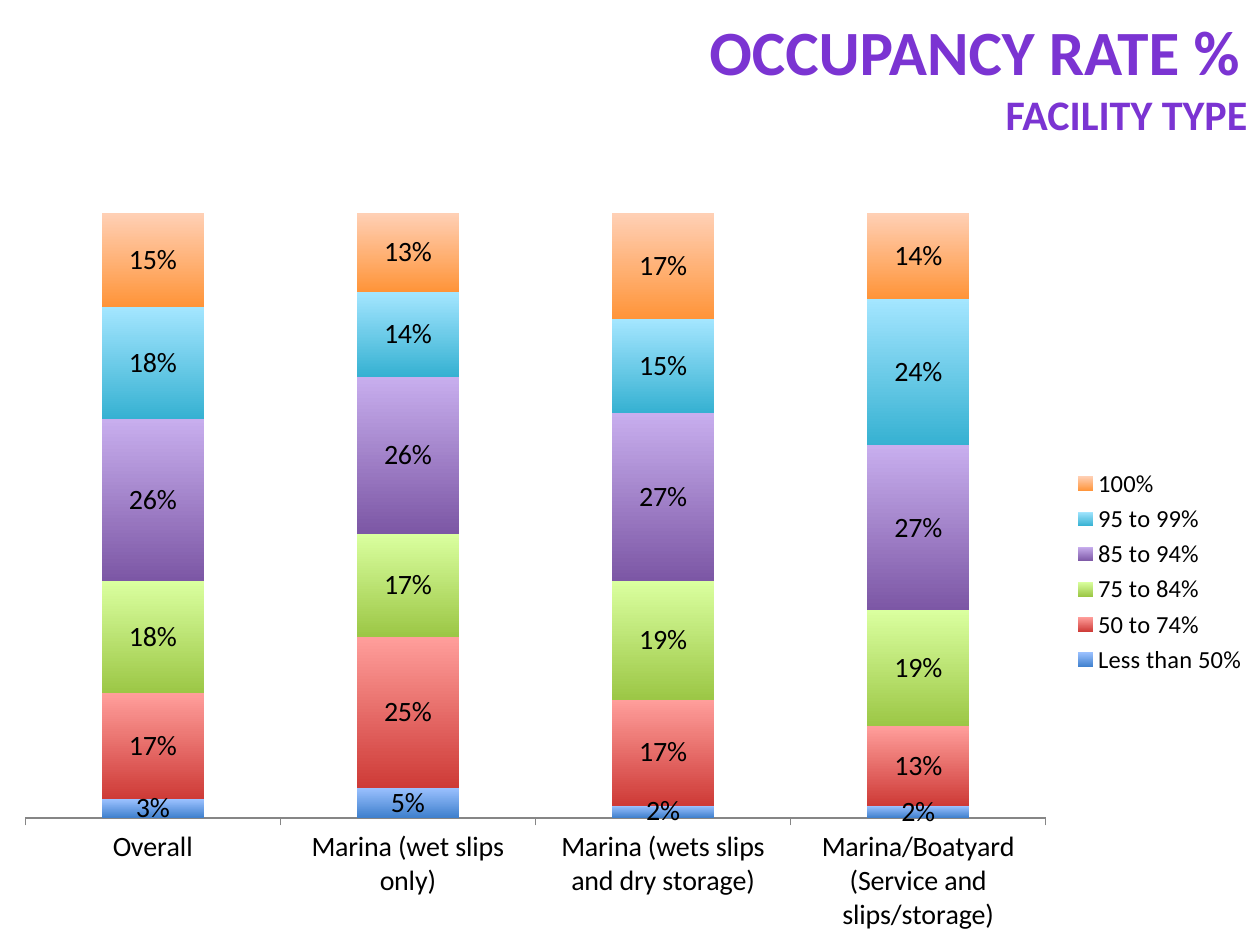
from dataclasses import dataclass

from lxml import etree
from pptx import Presentation, util as u
from pptx.chart.data import CategoryChartData
from pptx.dml.color import RGBColor
from pptx.enum import chart as ch, text as tx


@dataclass(frozen=True)
class Theme:
    font: str = "Calibri"
    title: str = "7B34D2"
    ink: str = "000000"
    axis: str = "868686"
    head: int = 36
    sub: int = 24
    label: int = 16
    key: int = 14


BANDS = [
    ("Less than 50%", (0.03, 0.05, 0.02, 0.02), "3F80CD", "9BC1FF"),
    ("50 to 74%", (0.17, 0.25, 0.17, 0.13), "CE3B37", "FF9E9B"),
    ("75 to 84%", (0.18, 0.17, 0.19, 0.19), "9CC746", "DAFF9F"),
    ("85 to 94%", (0.26, 0.26, 0.27, 0.27), "7C57A5", "C8AEEE"),
    ("95 to 99%", (0.18, 0.14, 0.15, 0.24), "36B1D2", "A4E6FF"),
    ("100%", (0.15, 0.13, 0.17, 0.14), "FF9439", "FFD0B5"),
]
TYPES = [
    "Overall",
    "Marina (wet slips only)",
    "Marina (wets slips and dry storage)",
    "Marina/Boatyard (Service and slips/storage)",
]


class Deck:
    def __init__(self, theme):
        self.theme = theme
        self.prs = Presentation()
        self.prs.slide_width, self.prs.slide_height = u.Inches(10), u.Inches(7.5)
        self.slide = self.prs.slides.add_slide(self.prs.slide_layouts[5])

    def place(self, x, y, w, h):
        wide, high = self.prs.slide_width, self.prs.slide_height
        return int(x * wide), int(y * high), int(w * wide), int(h * high)

    def style(self, font, size, color, bold=False):
        font.name, font.size, font.bold = self.theme.font, u.Pt(size), bold
        font.color.rgb = RGBColor.from_string(color)

    def title(self, box, lines):
        shape = self.slide.shapes.title
        shape.left, shape.top, shape.width, shape.height = self.place(*box)
        frame = shape.text_frame
        frame.word_wrap = False
        frame.auto_size = tx.MSO_AUTO_SIZE.SHAPE_TO_FIT_TEXT
        frame.vertical_anchor = tx.MSO_ANCHOR.TOP
        for i, (words, size, align) in enumerate(lines):
            para = frame.add_paragraph() if i else frame.paragraphs[0]
            para.alignment = align
            run = para.add_run()
            run.text = words
            self.style(run.font, size, self.theme.title, True)

    def stack(self, box, plot_box, cats, bands):
        data = CategoryChartData(number_format="0%")
        data.categories = cats
        for name, vals, *_ in bands:
            data.add_series(name, vals)
        kind = ch.XL_CHART_TYPE.COLUMN_STACKED_100
        chart = self.slide.shapes.add_chart(kind, *self.place(*box), data).chart
        chart.has_title = False
        self.style(chart.font, self.theme.label, self.theme.ink)
        self.axes(chart)
        self.legend(chart)
        plot = chart.plots[0]
        plot.gap_width, plot.overlap, plot.vary_by_categories = 150, 100, False
        for series, (_, _, low, high) in zip(plot.series, bands):
            self.band(series, low, high)
        self.layout(chart, plot_box)

    def axes(self, chart):
        value = chart.value_axis
        value.visible = value.has_major_gridlines = False
        value.minimum_scale, value.maximum_scale = 0, 1
        cat = chart.category_axis
        cat.major_tick_mark = ch.XL_TICK_MARK.OUTSIDE
        cat.format.line.color.rgb = RGBColor.from_string(self.theme.axis)
        self.style(cat.tick_labels.font, self.theme.label, self.theme.ink)

    def legend(self, chart):
        chart.has_legend = True
        chart.legend.position = ch.XL_LEGEND_POSITION.RIGHT
        chart.legend.include_in_layout = False
        self.style(chart.legend.font, self.theme.key, self.theme.ink)

    def band(self, series, low, high):
        fill = series.format.fill
        fill.gradient()
        fill.gradient_angle = 90
        for stop, color, spot in zip(fill.gradient_stops, (low, high), (0, 1)):
            stop.color.rgb = RGBColor.from_string(color)
            stop.position = spot
        series.format.line.fill.background()
        labels = series.data_labels
        labels.show_value = True
        labels.number_format, labels.number_format_is_linked = "0%", False
        labels.position = ch.XL_LABEL_POSITION.CENTER
        self.style(labels.font, self.theme.label, self.theme.ink)

    def layout(self, chart, box):
        area = chart.plots[0]._element.getparent()
        ns = "{%s}" % area.nsmap["c"]
        for old in area.findall(ns + "layout"):
            area.remove(old)
        root = etree.Element(ns + "layout")
        area.insert(0, root)
        manual = etree.SubElement(root, ns + "manualLayout")
        parts = [("layoutTarget", "inner"), ("xMode", "edge"), ("yMode", "edge")]
        for tag, val in parts + list(zip("xywh", box)):
            etree.SubElement(manual, ns + tag).set("val", str(val))


def main():
    theme = Theme()
    deck = Deck(theme)
    deck.title((0.547, 0.007, 0.453, 0.148), [
        ("OCCUPANCY RATE %", theme.head, tx.PP_ALIGN.CENTER),
        ("FACILITY TYPE", theme.sub, tx.PP_ALIGN.RIGHT),
    ])
    deck.stack((0, 0.21, 1, 0.79), (0.02, 0.02, 0.81, 0.81), TYPES, BANDS)
    deck.prs.save("out.pptx")


if __name__ == "__main__":
    main()
